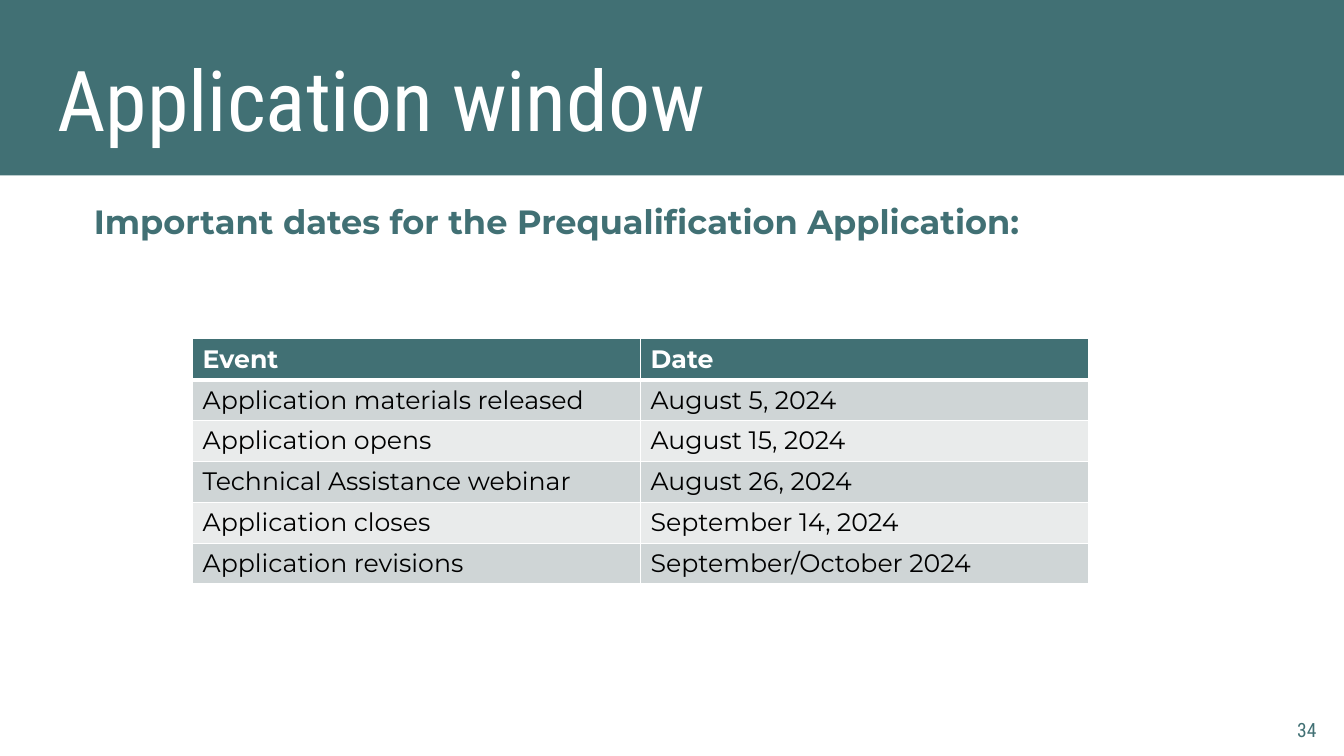
from lxml import etree
from pptx import Presentation
from pptx.dml.color import RGBColor
from pptx.enum.shapes import MSO_SHAPE
from pptx.enum.text import MSO_ANCHOR, PP_ALIGN
from pptx.oxml.ns import qn
from pptx.util import Pt

RECTANGLE = MSO_SHAPE.RECTANGLE
TOP, BOTTOM = MSO_ANCHOR.TOP, MSO_ANCHOR.BOTTOM
LEFT, RIGHT = PP_ALIGN.LEFT, PP_ALIGN.RIGHT

COLORS = {
    "teal": "417074",
    "white": "FFFFFF",
    "black": "000000",
    "dark_band": "CFD5D6",
    "light_band": "E9EBEB",
}
HEADING_FONT = "Roboto Condensed"
BODY_FONT = "Montserrat"


def write_text(frame, text, size, font=BODY_FONT, color="teal", bold=False,
               align=LEFT, anchor=TOP):
    frame.word_wrap = True
    frame.vertical_anchor = anchor
    para = frame.paragraphs[0]
    para.alignment = align
    span = para.add_run()
    span.text = text
    span.font.size = Pt(size)
    span.font.name = font
    span.font.bold = bold
    span.font.color.rgb = RGBColor.from_string(COLORS[color])
    return para


def add_border(cell, side, width):
    line = etree.SubElement(cell._tc.get_or_add_tcPr(), qn(f"a:ln{side}"), w=str(Pt(width)))
    fill = etree.SubElement(line, qn("a:solidFill"))
    etree.SubElement(fill, qn("a:srgbClr"), val=COLORS["white"])


deck = Presentation()
deck.slide_width, deck.slide_height = Pt(960), Pt(540)
page = deck.slides.add_slide(deck.slide_layouts[6])

banner = page.shapes.add_shape(RECTANGLE, Pt(0), Pt(0), Pt(960), Pt(125.3))
banner.shadow.inherit = False
banner.fill.solid()
banner.fill.fore_color.rgb = RGBColor.from_string(COLORS["teal"])
banner.line.fill.background()

title = page.shapes.add_textbox(Pt(34), Pt(30.2), Pt(791), Pt(65.5))
write_text(title.text_frame, "Application window", 60, font=HEADING_FONT, color="white")

subtitle = page.shapes.add_textbox(Pt(24), Pt(139.7), Pt(867.6), Pt(36))
para = write_text(subtitle.text_frame, "Important dates for the Prequalification Application:",
                  24, bold=True)
para._p.get_or_add_pPr().set("marL", str(Pt(36)))

number = page.shapes.add_textbox(Pt(917.3), Pt(519), Pt(30.2), Pt(14.5))
write_text(number.text_frame, "34", 14, font=HEADING_FONT, align=RIGHT, anchor=BOTTOM)

schedule = [
    ("Event", "Date"),
    ("Application materials released", "August 5, 2024"),
    ("Application opens", "August 15, 2024"),
    ("Technical Assistance webinar", "August 26, 2024"),
    ("Application closes", "September 14, 2024"),
    ("Application revisions", "September/October 2024"),
]
table = page.shapes.add_table(len(schedule), 2, Pt(137.6), Pt(242), Pt(640), Pt(175.2)).table
for column in table.columns:
    column.width = Pt(320)

for index, entries in enumerate(schedule):
    table.rows[index].height = Pt(29.2)
    header = index == 0
    band = "teal" if header else "dark_band" if index % 2 else "light_band"
    widths = {"L": 1, "R": 1, "T": 3 if index == 1 else 1, "B": 3 if header else 1}
    for cell, entry in zip(table.rows[index].cells, entries):
        for side, width in widths.items():
            add_border(cell, side, width)
        cell.fill.solid()
        cell.fill.fore_color.rgb = RGBColor.from_string(COLORS[band])
        write_text(cell.text_frame, entry, 18, color="white" if header else "black", bold=header)

deck.save("out.pptx")
